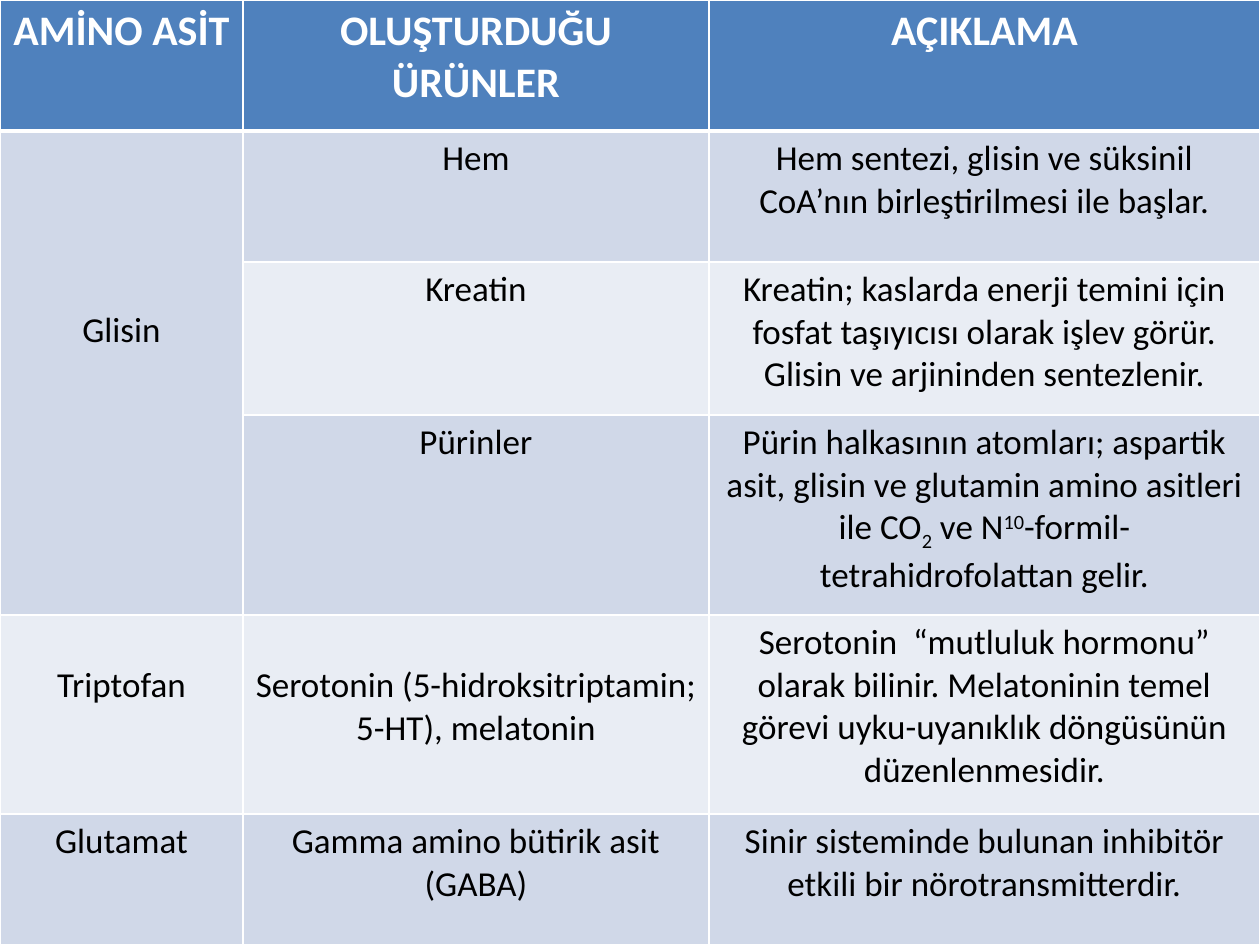
"""Build a slide with a table of amino acids and the products they form."""
from dataclasses import dataclass

from lxml import etree
from pptx import Presentation
from pptx.dml.color import RGBColor
from pptx.enum.text import PP_ALIGN
from pptx.oxml.ns import qn
from pptx.table import _Cell
from pptx.util import Emu, Pt

CENTER = PP_ALIGN.CENTER
PX = 914400 / 126
FONT = "Calibri"
HEADER_SIZE, BODY_SIZE = 24, 20
THIN, THICK = Pt(1), Pt(3)
WHITE = RGBColor(0xFF, 0xFF, 0xFF)
BLACK = RGBColor(0x00, 0x00, 0x00)
HEADER_BLUE = RGBColor(0x4F, 0x81, 0xBD)
BAND_DARK = RGBColor(0xD0, 0xD8, 0xE8)
BAND_LIGHT = RGBColor(0xE9, 0xED, 0xF4)

SLIDE_WIDTH, SLIDE_HEIGHT = 1260, 945
COLUMN_WIDTHS = (243, 466, 551)
ROW_HEIGHTS = (131, 131, 153, 200, 199, 131)
TOP_MARGIN, LINE_HEIGHT = 6, 43


@dataclass(frozen=True)
class TextRun:
    text: str
    baseline: int = 0


@dataclass(frozen=True)
class Entry:
    runs: tuple[TextRun, ...] = ()
    lines_down: int = 0


def entry(text: str, lines_down: int = 0) -> Entry:
    """Return an entry made of one plain run."""
    return Entry((TextRun(text),), lines_down)


PURINE_NOTE = Entry((
    TextRun("Pürin halkasının atomları; aspartik asit, glisin ve glutamin amino asitleri ile CO"),
    TextRun("2", -25),
    TextRun(" ve N"),
    TextRun("10", 30),
    TextRun("-formil-tetrahidrofolattan gelir."),
))

ROWS = (
    (entry("AMİNO ASİT"), entry("OLUŞTURDUĞU ÜRÜNLER"), entry("AÇIKLAMA")),
    (entry("Glisin", 4), entry("Hem"),
     entry("Hem sentezi, glisin ve süksinil CoA’nın birleştirilmesi ile başlar.")),
    (Entry(), entry("Kreatin"),
     entry("Kreatin; kaslarda enerji temini için fosfat taşıyıcısı olarak işlev görür. "
           "Glisin ve arjininden sentezlenir.")),
    (Entry(), entry("Pürinler"), PURINE_NOTE),
    (entry("Triptofan", 1), entry("Serotonin (5-hidroksitriptamin; 5-HT), melatonin", 1),
     entry("Serotonin  “mutluluk hormonu” olarak bilinir. Melatoninin temel görevi "
           "uyku-uyanıklık döngüsünün düzenlenmesidir.")),
    (entry("Glutamat"), entry("Gamma amino bütirik asit (GABA)"),
     entry("Sinir sisteminde bulunan inhibitör etkili bir nörotransmitterdir.")),
)


def px(length: int) -> Emu:
    """Turn px into EMU."""
    return Emu(round(length * PX))


def draw_borders(cell: _Cell, top: int, bottom: int) -> None:
    """Give a cell white lines on all four sides."""
    properties = cell._tc.get_or_add_tcPr()
    sides = (("a:lnL", THIN), ("a:lnR", THIN), ("a:lnT", top), ("a:lnB", bottom))
    for position, (tag, width) in enumerate(sides):
        line = etree.Element(qn(tag), w=str(width))
        fill = etree.SubElement(line, qn("a:solidFill"))
        etree.SubElement(fill, qn("a:srgbClr"), val=str(WHITE))
        properties.insert(position, line)


def write_entry(cell: _Cell, content: Entry, is_header: bool) -> None:
    """Write the runs of an entry into a cell."""
    cell.margin_top = px(TOP_MARGIN + content.lines_down * LINE_HEIGHT)
    paragraph = cell.text_frame.paragraphs[0]
    paragraph.alignment = CENTER
    for part in content.runs:
        run = paragraph.add_run()
        run.text = part.text
        run.font.name = FONT
        run.font.size = Pt(HEADER_SIZE if is_header else BODY_SIZE)
        run.font.bold = is_header
        run.font.color.rgb = WHITE if is_header else BLACK
        if part.baseline:
            run._r.get_or_add_rPr().set("baseline", str(part.baseline * 1000))


def draw_cell(cell: _Cell, content: Entry, row: int) -> None:
    """Fill, outline and write one cell."""
    band = BAND_DARK if row % 2 else BAND_LIGHT
    cell.fill.solid()
    cell.fill.fore_color.rgb = band if row else HEADER_BLUE
    draw_borders(cell, THICK if row == 1 else THIN, THICK if row == 0 else THIN)
    write_entry(cell, content, row == 0)


def main() -> None:
    """Build and save the presentation."""
    presentation = Presentation()
    presentation.slide_width = px(SLIDE_WIDTH)
    presentation.slide_height = px(SLIDE_HEIGHT)
    slide = presentation.slides.add_slide(presentation.slide_layouts[6])
    table = slide.shapes.add_table(
        len(ROWS), len(COLUMN_WIDTHS), 0, 0, px(SLIDE_WIDTH), px(SLIDE_HEIGHT)).table
    for column, width in zip(table.columns, COLUMN_WIDTHS):
        column.width = px(width)
    for row, height in zip(table.rows, ROW_HEIGHTS):
        row.height = px(height)
    for row_index, entries in enumerate(ROWS):
        for column_index, content in enumerate(entries):
            draw_cell(table.cell(row_index, column_index), content, row_index)
    table.cell(1, 0).merge(table.cell(3, 0))
    presentation.save("out.pptx")


if __name__ == "__main__":
    main()
